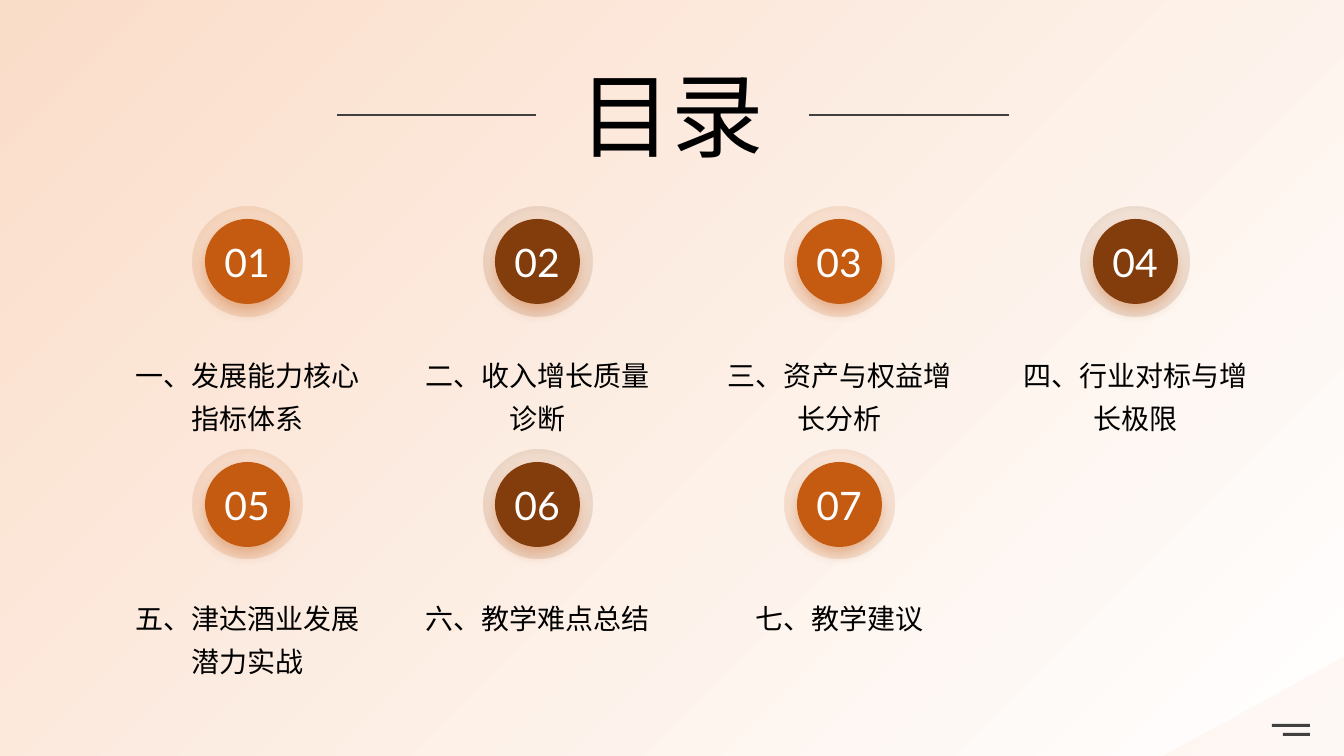
"""Build the contents slide with seven numbered chapters."""
from lxml import etree
from pptx import Presentation
from pptx.dml.color import RGBColor
from pptx.enum.shapes import MSO_CONNECTOR, MSO_SHAPE
from pptx.enum.text import PP_ALIGN
from pptx.oxml import parse_xml
from pptx.oxml.ns import nsdecls, qn
from pptx.util import Pt

PX = 12192000 / 1344
WIDTH, HEIGHT = 1344, 756
WHITE = RGBColor(0xFF, 0xFF, 0xFF)
BLACK = RGBColor(0x00, 0x00, 0x00)
GREY = RGBColor(0x40, 0x40, 0x40)
PEACH = RGBColor(0xFA, 0xDD, 0xC9)
CORNER = RGBColor(0xF9, 0xD4, 0xBB)
ORANGE = RGBColor(0xC5, 0x5A, 0x11)
BROWN = RGBColor(0x83, 0x3C, 0x0B)

presentation = Presentation()
presentation.slide_width = round(WIDTH * PX)
presentation.slide_height = round(HEIGHT * PX)
slide = presentation.slides.add_slide(presentation.slide_layouts[6])


def add_text(text, *, box, size, color=BLACK, spacing=None):
    frame = slide.shapes.add_textbox(*(round(length * PX) for length in box)).text_frame
    frame.word_wrap = True
    paragraph = frame.paragraphs[0]
    paragraph.alignment = PP_ALIGN.CENTER
    paragraph.line_spacing = spacing
    run = paragraph.add_run()
    run.text = text
    run.font.name = "Lato"
    run.font.size = Pt(size)
    run.font.color.rgb = color


def add_filled(kind, box, color, gradient=None):
    shape = slide.shapes.add_shape(kind, *(round(length * PX) for length in box))
    shape.shadow.inherit = False
    shape.line.fill.background()
    shape.fill.solid()
    shape.fill.fore_color.rgb = color
    if gradient:
        stops, direction = gradient
        stop_xml = "".join(
            f'<a:gs pos="{position * 1000}"><a:srgbClr val="{stop_color}">'
            f'<a:alpha val="{alpha * 1000}"/></a:srgbClr></a:gs>'
            for position, stop_color, alpha in stops)
        solid = shape._element.spPr.find(qn("a:solidFill"))
        solid.getparent().replace(solid, parse_xml(
            f'<a:gradFill {nsdecls("a")} rotWithShape="1">'
            f'<a:gsLst>{stop_xml}</a:gsLst>{direction}</a:gradFill>'))
    return shape


LINEAR = '<a:lin ang="13500000" scaled="0"/>'
RADIAL = '<a:path path="circle"><a:fillToRect l="50000" t="50000" r="50000" b="50000"/></a:path>'

add_filled(MSO_SHAPE.RECTANGLE, (0, 0, WIDTH, HEIGHT), WHITE,
           ([(0, WHITE, 100), (100, PEACH, 100)], LINEAR))

builder = slide.shapes.build_freeform(WIDTH, 657, scale=PX)
builder.add_line_segments([(WIDTH, HEIGHT), (1163, HEIGHT)], close=True)
corner = builder.convert_to_shape()
corner.shadow.inherit = False
corner.line.fill.background()
corner.fill.solid()
corner.fill.fore_color.rgb = CORNER
corner_color = corner._element.spPr.find(qn("a:solidFill"))[0]
etree.SubElement(corner_color, qn("a:alpha"), val="15000")

for left, top in [(1272, 724), (1283, 733)]:
    add_filled(MSO_SHAPE.RECTANGLE, (left, top, 1310 - left, 3), GREY)

chapters = [
    "一、发展能力核心指标体系", "二、收入增长质量诊断",
    "三、资产与权益增长分析", "四、行业对标与增长极限",
    "五、津达酒业发展潜力实战", "六、教学难点总结", "七、教学建议",
]
column_lefts = [193, 483, 785, 1081]
for index, chapter in enumerate(chapters):
    row, column = divmod(index, len(column_lefts))
    left, top = column_lefts[column], 207 + 243 * row
    color = BROWN if column % 2 else ORANGE
    add_filled(MSO_SHAPE.OVAL, (left, top, 109, 109), color,
               ([(42, color, 0), (83, color, 20)], RADIAL))
    disc = add_filled(MSO_SHAPE.OVAL, (left + 12, top + 12, 85, 85), color)
    effects = disc._element.spPr.find(qn("a:effectLst"))
    effects.append(parse_xml(
        f'<a:outerShdw {nsdecls("a")} blurRad="{Pt(10)}" dist="{Pt(5)}" dir="5400000" '
        f'algn="t" rotWithShape="0"><a:srgbClr val="{ORANGE}">'
        '<a:alpha val="40000"/></a:srgbClr></a:outerShdw>'))
    add_text(f"{index + 1:02}", box=(left + 17, top + 26, 74, 57), size=28, color=WHITE)
    add_text(chapter, box=(left - 80, top + 136, 269, 86), size=20, spacing=1.3)

add_text("目录", box=(463, 53, 418, 122), size=66)
for start, end in [(337, 536), (1009, 809)]:
    rule = slide.shapes.add_connector(
        MSO_CONNECTOR.STRAIGHT, *(round(length * PX) for length in (start, 115, end, 115)))
    rule.line.color.rgb = GREY
    rule.line.width = Pt(1.5)
    etree.SubElement(rule._element.spPr, qn("a:effectLst"))

presentation.save("out.pptx")
